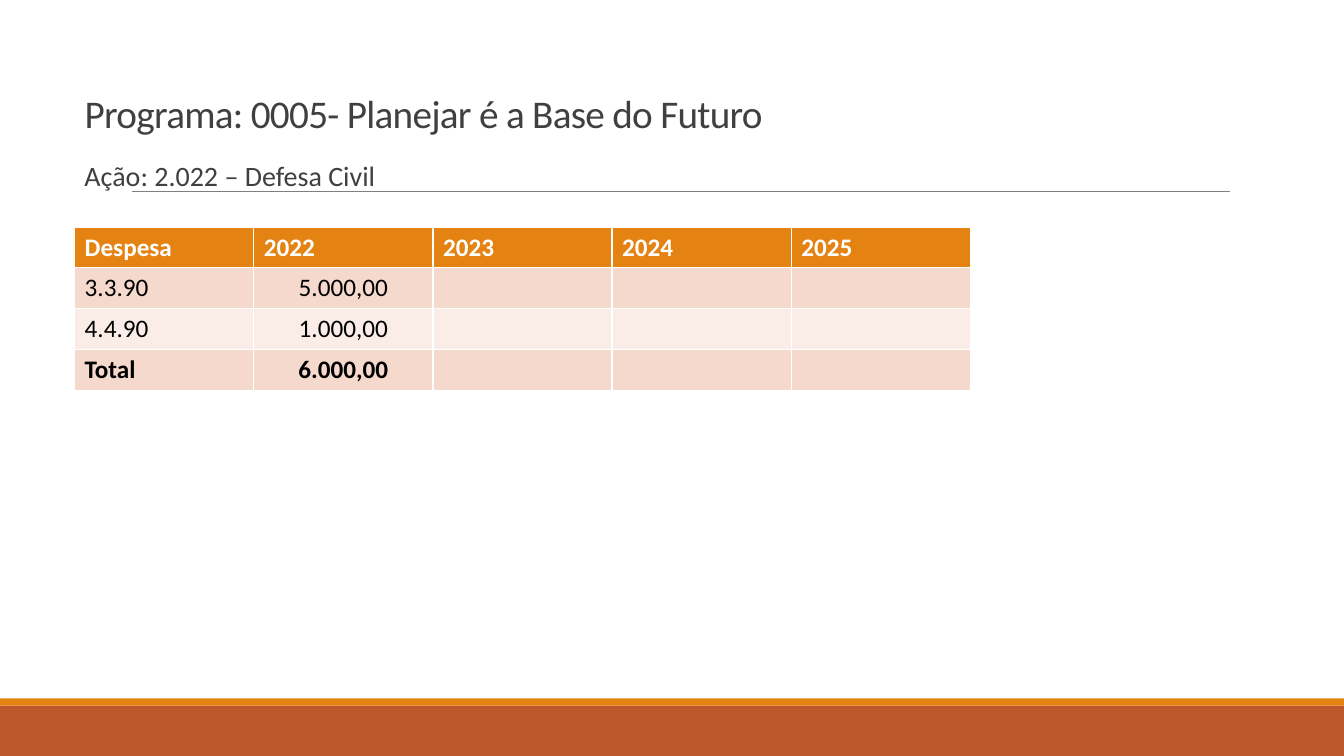
"""Build the budget slide for the civil defence action."""
from lxml import etree
from pptx import Presentation
from pptx.dml.color import RGBColor
from pptx.enum import shapes, text
from pptx.oxml import ns
from pptx.util import Cm, Pt

TITLE = "Programa: 0005- Planejar é a Base do Futuro"
ACTION = "Ação: 2.022 – Defesa Civil"
ROWS = [
    ("Despesa", "2022", "2023", "2024", "2025"),
    ("3.3.90", "5.000,00", "", "", ""),
    ("4.4.90", "1.000,00", "", "", ""),
    ("Total", "6.000,00", "", "", ""),
]

FONT = "Calibri"
WHITE = RGBColor(0xFF, 0xFF, 0xFF)
BLACK = RGBColor(0, 0, 0)
GREY = RGBColor(0x80, 0x80, 0x80)
DARK = RGBColor(0x40, 0x40, 0x40)
ORANGE = RGBColor(0xE4, 0x83, 0x12)
RUST = RGBColor(0xBD, 0x58, 0x2C)
PINK = RGBColor(0xF5, 0xD9, 0xCC)
PALE = RGBColor(0xFA, 0xED, 0xE7)

WIDE, HIGH = Cm(33.87), Cm(19.05)
LEFT, SPAN = Cm(1.88), Cm(23.88)
BANDS = [(Cm(17.78), Cm(1.27), RUST), (Cm(17.6), Cm(0.18), ORANGE)]
COL, ROW = Cm(4.515), Cm(1.03)


def style(para, size, color, bold=False):
    """Format every run of a paragraph."""
    for run in para.runs:
        font = run.font
        font.name, font.size, font.bold = FONT, Pt(size), bold
        font.color.rgb = color


def add_base(slide):
    """Draw the bottom bands and the rule under the heading."""
    for top, tall, color in BANDS:
        band = slide.shapes.add_shape(
            shapes.MSO_SHAPE.RECTANGLE, 0, top, WIDE, tall)
        band.shadow.inherit = False
        band.fill.solid()
        band.fill.fore_color.rgb = color
        band.line.fill.background()
    rule = slide.shapes.add_connector(
        shapes.MSO_CONNECTOR.STRAIGHT, Cm(3.33), Cm(4.82), Cm(31), Cm(4.82))
    rule.line.color.rgb, rule.line.width = GREY, Pt(0.5)
    etree.SubElement(rule._element.spPr, ns.qn("a:effectLst"))


def add_heads(slide):
    """Write the title and the action line."""
    title = slide.shapes.title
    title.left, title.top, title.width, title.height = (
        LEFT, Cm(1.7), SPAN, Cm(1.88))
    frame = title.text_frame
    frame.text = TITLE
    frame.word_wrap = True
    frame.auto_size = text.MSO_AUTO_SIZE.NONE
    frame.vertical_anchor = text.MSO_ANCHOR.BOTTOM
    para = frame.paragraphs[0]
    para.alignment, para.line_spacing = text.PP_ALIGN.LEFT, 0.85
    style(para, 28, DARK)
    para.runs[0].font._element.set("spc", "-50")

    box = slide.shapes.add_textbox(LEFT, Cm(3.96), SPAN, Cm(12.8))
    frame = box.text_frame
    frame.text = ACTION
    frame.word_wrap = True
    para = frame.paragraphs[0]
    para.line_spacing = 0.9
    style(para, 20, DARK)


def add_costs(slide):
    """Fill the table of costs by year."""
    count = len(ROWS[0])
    table = slide.shapes.add_table(
        len(ROWS), count, LEFT, Cm(5.72),
        COL * count, ROW * len(ROWS)).table
    for i, row in enumerate(ROWS):
        head, total = i == 0, i == len(ROWS) - 1
        for j, value in enumerate(row):
            cell = table.cell(i, j)
            cell.fill.solid()
            cell.fill.fore_color.rgb = (
                ORANGE if head else PINK if i % 2 else PALE)
            cell.text_frame.text = value
            para = cell.text_frame.paragraphs[0]
            if j and not head:
                para.alignment = text.PP_ALIGN.CENTER
            style(para, 18, WHITE if head else BLACK, head or total)


def main():
    """Make and save the deck."""
    deck = Presentation()
    deck.slide_width, deck.slide_height = WIDE, HIGH
    slide = deck.slides.add_slide(deck.slide_layouts[5])
    add_base(slide)
    add_heads(slide)
    add_costs(slide)
    deck.save("out.pptx")


if __name__ == "__main__":
    main()
